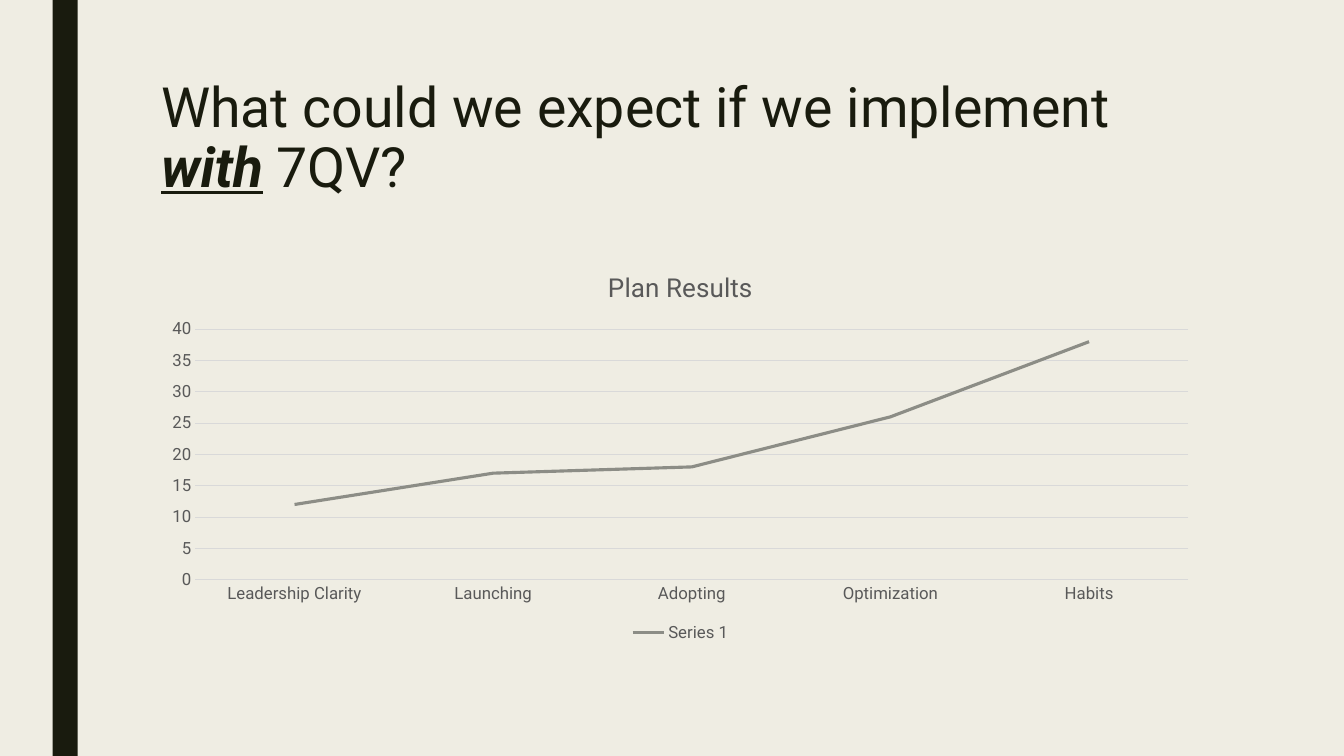
import pptx
import pptx.chart.data
import pptx.dml.color
import pptx.enum.chart
import pptx.enum.shapes
import pptx.enum.text
import pptx.util

Pt = pptx.util.Pt
Color = pptx.dml.color.RGBColor
Kind = pptx.enum.chart.XL_CHART_TYPE
Place = pptx.enum.chart.XL_LEGEND_POSITION
Tick = pptx.enum.chart.XL_TICK_MARK

CREAM = Color(0xEF, 0xED, 0xE3)
INK = Color(0x19, 0x1B, 0x0E)
GREY = Color(0x59, 0x59, 0x59)
PALE = Color(0xD9, 0xD9, 0xD9)
STONE = Color(0x8C, 0x8D, 0x86)


class Deck:
    """Holds the style and the current slide."""

    face = "Roboto"

    def __init__(self):
        self.file = pptx.Presentation()
        self.file.slide_width, self.file.slide_height = Pt(960), Pt(540)
        self.slide = self.file.slides.add_slide(self.file.slide_layouts[6])
        fill = self.slide.background.fill
        fill.solid()
        fill.fore_color.rgb = CREAM

    def style(self, font, size, color, **marks):
        values = {"name": self.face, "size": Pt(size), **marks}
        for key, value in values.items():
            setattr(font, key, value)
        font.color.rgb = color

    def stroke(self, line, color, width):
        line.color.rgb = color
        line.width = Pt(width)

    def bar(self, box, color):
        shape = self.slide.shapes.add_shape(
            pptx.enum.shapes.MSO_SHAPE.RECTANGLE, *map(Pt, box))
        shape.shadow.inherit = False
        shape.fill.solid()
        shape.fill.fore_color.rgb = color
        shape.line.fill.background()

    def text(self, box, runs, size, color, space):
        frame = self.slide.shapes.add_textbox(*map(Pt, box)).text_frame
        frame.word_wrap = True
        frame.vertical_anchor = pptx.enum.text.MSO_ANCHOR.TOP
        para = frame.paragraphs[0]
        para.line_spacing = space
        for words, marks in runs:
            run = para.add_run()
            run.text = words
            self.style(run.font, size, color, **marks)

    def graph(self, box, title, names, series, color):
        data = pptx.chart.data.CategoryChartData()
        data.categories = names
        for name, values in series.items():
            data.add_series(name, values)
        chart = self.slide.shapes.add_chart(
            Kind.LINE, *map(Pt, box), data).chart
        self.style(chart.font, 12, GREY)

        # Title and legend
        chart.has_title = True
        frame = chart.chart_title.text_frame
        frame.text = title
        self.style(frame.paragraphs[0].runs[0].font, 18.6, GREY, bold=False)
        chart.chart_title.include_in_layout = False
        chart.has_legend = True
        chart.legend.position = Place.BOTTOM
        chart.legend.include_in_layout = False
        self.style(chart.legend.font, 12, GREY)

        # Axes
        for axis in (chart.category_axis, chart.value_axis):
            axis.major_tick_mark = axis.minor_tick_mark = Tick.NONE
            self.style(axis.tick_labels.font, 12, GREY)
        self.stroke(chart.category_axis.format.line, PALE, 0.75)
        scale = chart.value_axis
        scale.minimum_scale, scale.maximum_scale = 0, 40
        scale.major_unit = 5
        scale.format.line.fill.background()
        self.stroke(scale.major_gridlines.format.line, PALE, 0.75)

        # Lines
        plot = chart.plots[0]
        plot.vary_by_categories = False
        for line in plot.series:
            line.smooth = False
            line.marker.style = pptx.enum.chart.XL_MARKER_STYLE.NONE
            self.stroke(line.format.line, color, 2.25)


def main():
    deck = Deck()

    # Side bar
    deck.bar((37.5, 0, 18, 540), INK)

    # Title
    runs = [
        ("What could we expect if we implement ", {}),
        ("with", {"bold": True, "italic": True, "underline": True}),
        (" ", {"bold": True, "italic": True}),
        ("7QV?", {}),
    ]
    deck.text((108, 54, 756, 117), runs, 39.6, INK, 0.89)

    # Chart
    names = ["Leadership Clarity", "Launching", "Adopting",
             "Optimization", "Habits"]
    deck.graph((108, 180, 756, 282), "Plan Results", names,
               {"Series 1": (12, 17, 18, 26, 38)}, STONE)

    deck.file.save("out.pptx")


if __name__ == "__main__":
    main()
